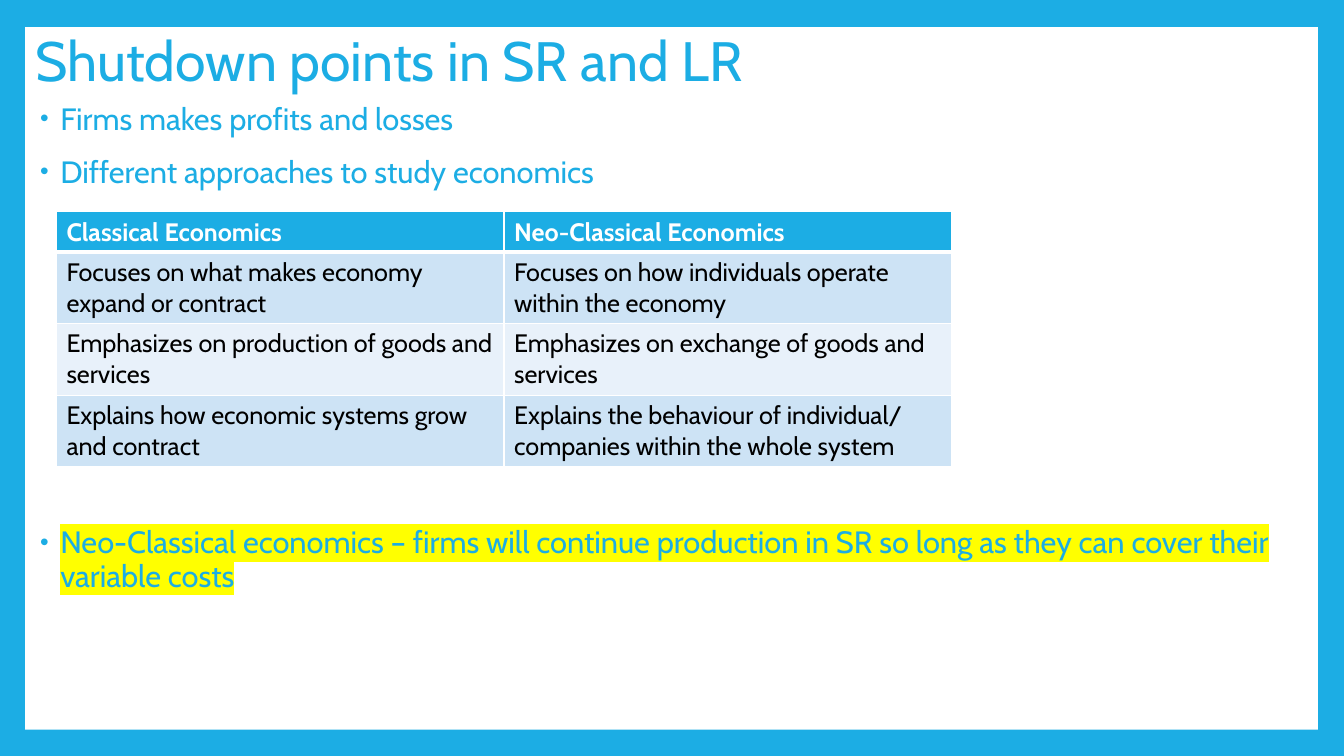
from dataclasses import dataclass

from lxml import etree
from pptx import Presentation
from pptx.dml.color import RGBColor
from pptx.enum import shapes, text
from pptx.oxml.ns import qn
from pptx.util import Inches, Pt


@dataclass(frozen=True)
class Theme:
    accent: str = "1CADE4"
    paper: str = "FFFFFF"
    ink: str = "000000"
    highlight: str = "FFFF00"
    bands: tuple = ("CDE3F5", "E8F1FA")
    face: str = "Cabin"
    title_size: float = 39.6
    body_size: float = 22
    table_size: float = 18


THEME = Theme()

POINTS = [  # wording, points of space before, highlighted
    ("Firms makes profits and losses", 14, False),
    ("Different approaches to study economics", 14, False),
    ("Neo-Classical economics – firms will continue production in SR "
     "so long as they can cover their variable costs", 241, True),
]
COMPARISON = [
    ("Classical Economics", "Neo-Classical Economics"),
    ("Focuses on what makes economy expand or contract",
     "Focuses on how individuals operate within the economy"),
    ("Emphasizes on production of goods and services",
     "Emphasizes on exchange of goods and services"),
    ("Explains how economic systems grow and contract",
     "Explains the behaviour of individual/ companies within the whole system"),
]


def paint(fill, color):
    fill.solid()
    fill.fore_color.rgb = RGBColor.from_string(color)


def style(font, size, color, bold=False):
    font.name = THEME.face
    font.size = Pt(size)
    font.bold = bold
    font.color.rgb = RGBColor.from_string(color)


def add_color(parent, tag, color):
    holder = etree.SubElement(parent, qn(tag))
    etree.SubElement(holder, qn("a:srgbClr"), val=color)


def add_bullet(paragraph):
    props = paragraph._p.get_or_add_pPr()
    props.set("marL", str(Inches(0.25)))
    props.set("indent", str(Inches(-0.2)))
    add_color(props, "a:buClr", THEME.accent)
    etree.SubElement(props, qn("a:buSzPct"), val="80000")
    etree.SubElement(props, qn("a:buFont"), typeface="Arial")
    etree.SubElement(props, qn("a:buChar"), char="•")


def set_borders(cell, top, bottom):
    """Draw white lines round a cell; top and bottom widths are in points."""
    props = cell._tc.get_or_add_tcPr()
    for side, width in (("L", 1), ("R", 1), ("T", top), ("B", bottom)):
        line = etree.SubElement(props, qn(f"a:ln{side}"), w=str(Pt(width)))
        add_color(line, "a:solidFill", THEME.paper)


def add_panel(slide, left, top, width, height):
    paint(slide.background.fill, THEME.accent)
    panel = slide.shapes.add_shape(
        shapes.MSO_SHAPE.RECTANGLE, left, top, width, height)
    panel.shadow.inherit = False
    paint(panel.fill, THEME.paper)
    panel.line.fill.background()
    slide.shapes._spTree.insert(2, panel._element)  # behind the title


def set_title(slide, wording, left, top, width, height):
    title = slide.shapes.title
    title.left, title.top, title.width, title.height = left, top, width, height
    frame = title.text_frame
    frame.text = wording
    frame.auto_size = text.MSO_AUTO_SIZE.NONE
    frame.vertical_anchor = text.MSO_ANCHOR.MIDDLE
    heading = frame.paragraphs[0]
    heading.alignment = text.PP_ALIGN.LEFT
    heading.line_spacing = 0.9
    style(heading.font, THEME.title_size, THEME.accent)


def add_points(slide, left, top, width, height):
    frame = slide.shapes.add_textbox(left, top, width, height).text_frame
    frame.word_wrap = True
    for index, (wording, space, highlighted) in enumerate(POINTS):
        point = frame.add_paragraph() if index else frame.paragraphs[0]
        point.line_spacing = 0.9
        point.space_before = Pt(space)
        add_bullet(point)
        style(point.font, THEME.body_size, THEME.accent)
        run = point.add_run()
        run.text = wording
        if highlighted:
            add_color(run._r.get_or_add_rPr(), "a:highlight", THEME.highlight)


def add_comparison(slide, left, top, width, height, header_height):
    rows, columns = len(COMPARISON), len(COMPARISON[0])
    table = slide.shapes.add_table(
        rows, columns, left, top, width, height).table
    body_height = (height - header_height) // (rows - 1)
    for r, wordings in enumerate(COMPARISON):
        header = r == 0
        table.rows[r].height = header_height if header else body_height
        for c, wording in enumerate(wordings):
            cell = table.cell(r, c)
            cell.text = wording
            style(cell.text_frame.paragraphs[0].font, THEME.table_size,
                  THEME.paper if header else THEME.ink, header)
            set_borders(cell, 3 if r == 1 else 1, 3 if header else 1)
            paint(cell.fill,
                  THEME.accent if header else THEME.bands[(r - 1) % 2])


def build_shutdown_slide(deck):
    slide = deck.slides.add_slide(deck.slide_layouts[5])
    left = Inches(0.25)
    add_panel(slide, left, Inches(0.27), Inches(12.82), Inches(6.97))
    set_title(slide, "Shutdown points in SR and LR",
              left, Inches(0.28), Inches(10.8), Inches(0.7))
    add_points(slide, left, Inches(0.98), Inches(12.83), Inches(6.24))
    add_comparison(slide, Inches(0.56), Inches(2.1), Inches(8.88),
                   Inches(2.53), header_height=Inches(0.4))


def main():
    deck = Presentation()
    deck.slide_width, deck.slide_height = Inches(13.33), Inches(7.5)
    build_shutdown_slide(deck)
    deck.save("out.pptx")


if __name__ == "__main__":
    main()
